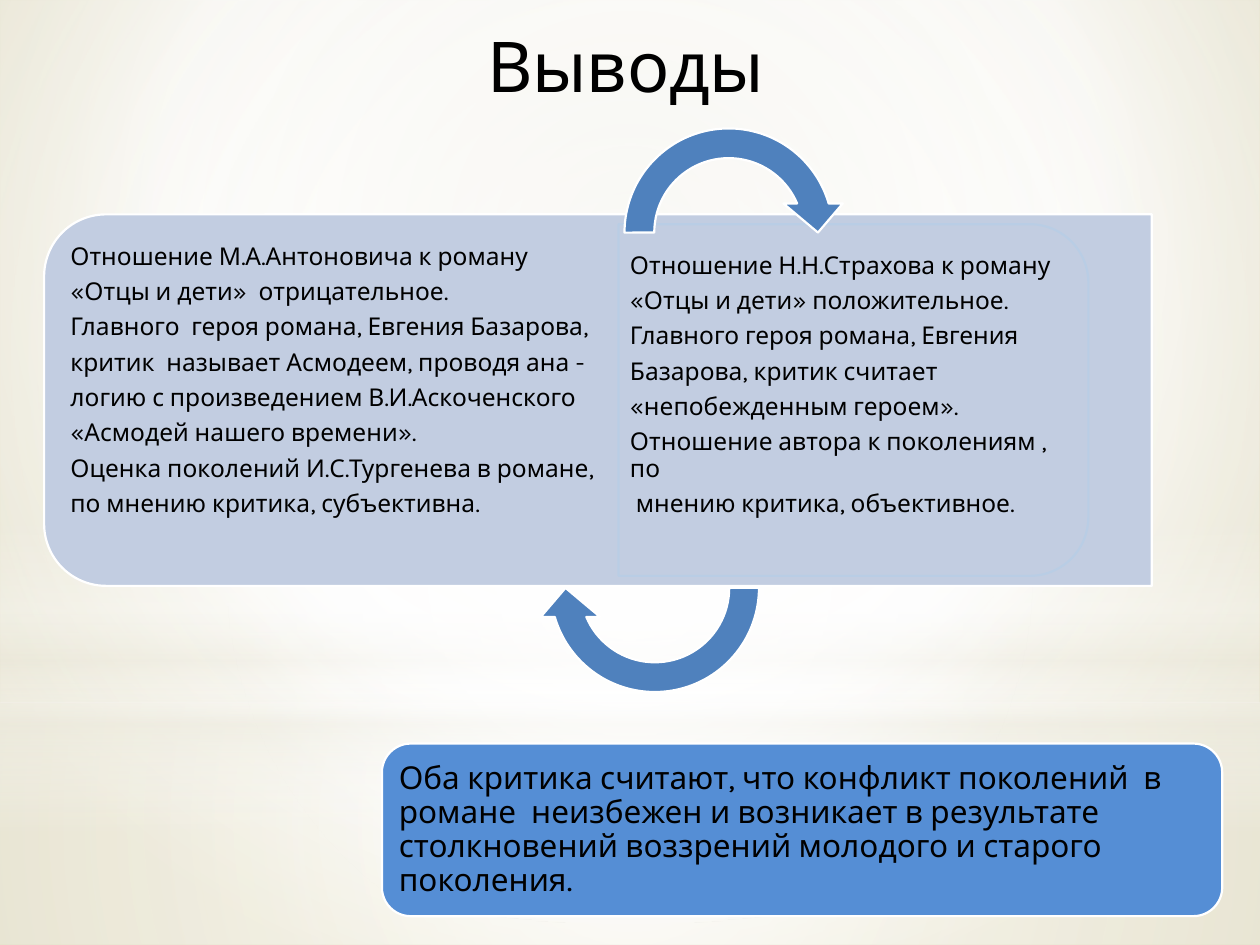
from lxml import etree
from pptx import Presentation
from pptx import util as u
from pptx.dml.color import RGBColor
from pptx.enum import shapes, text
from pptx.oxml.ns import qn

BLACK = RGBColor(0x00, 0x00, 0x00)
WHITE = RGBColor(0xFF, 0xFF, 0xFF)
PANEL = RGBColor(0xC2, 0xCD, 0xE1)
PANEL_EDGE = RGBColor(0xB9, 0xCD, 0xE5)
ARROW = RGBColor(0x4F, 0x81, 0xBD)
SUMMARY = RGBColor(0x55, 0x8E, 0xD5)
SAND = RGBColor(0xEE, 0xEC, 0xE1)
DUNE = RGBColor(0xE7, 0xE4, 0xD4)
STRAW = RGBColor(0xD5, 0xCC, 0x9F)
FONT = "Karla"
SHAPE = shapes.MSO_SHAPE
CENTRE = (50, 50, 50, 50)

ANTONOVICH = [
    "Отношение М.А.Антоновича к роману",
    "«Отцы и дети»  отрицательное.",
    "Главного  героя романа, Евгения Базарова, ",
    "критик  называет Асмодеем, проводя ана -",
    "логию с произведением В.И.Аскоченского ",
    "«Асмодей нашего времени».",
    "Оценка поколений И.С.Тургенева в романе, ",
    "по мнению критика, субъективна.",
]
STRAKHOV = [
    "Отношение Н.Н.Страхова к роману",
    "«Отцы и дети» положительное.",
    "Главного героя романа, Евгения",
    "Базарова, критик считает",
    "«непобежденным героем».",
    "Отношение автора к поколениям , по",
    " мнению критика, объективное.",
]
CONCLUSION = [
    "Оба критика считают, что конфликт поколений  в романе  неизбежен и "
    "возникает в результате столкновений воззрений молодого и старого поколения."
]


def cm(*values):
    return [u.Cm(v) for v in values]


def set_gradient(fill, element, stops, focus=None):
    fill.solid()
    old = element.find(".//" + qn("a:solidFill"))
    grad = etree.Element(qn("a:gradFill"), rotWithShape="1")
    gs_list = etree.SubElement(grad, qn("a:gsLst"))
    for pos, color, opacity in stops:
        gs = etree.SubElement(gs_list, qn("a:gs"), pos=str(pos * 1000))
        clr = etree.SubElement(gs, qn("a:srgbClr"), val=str(color))
        if opacity < 100:
            etree.SubElement(clr, qn("a:alpha"), val=str(opacity * 1000))
    if focus:
        path = etree.SubElement(grad, qn("a:path"))
        path.set("path", "circle")
        sides = {k: str(v * 1000) for k, v in zip("ltrb", focus)}
        etree.SubElement(path, qn("a:fillToRect"), sides)
    else:
        etree.SubElement(grad, qn("a:lin"), ang="5400000", scaled="0")
    old.getparent().replace(old, grad)


def add_block(s, kind, box, fill, line=WHITE, rotation=0):
    x, y, w, h = box
    if rotation in (90, 270):
        x, y, w, h = x + (w - h) / 2, y + (h - w) / 2, h, w
    sp = s.shapes.add_shape(kind, *cm(x, y, w, h))
    sp.rotation = rotation
    sp.shadow.inherit = False
    sp.fill.solid()
    sp.fill.fore_color.rgb = fill
    sp.line.color.rgb = line
    sp.line.width = u.Pt(1.25)
    return sp


def add_text(s, box, lines, size, insets, align=text.PP_ALIGN.LEFT,
             anchor=text.MSO_ANCHOR.TOP):
    tf = s.shapes.add_textbox(*cm(*box)).text_frame
    tf.word_wrap = True
    tf.vertical_anchor = anchor
    tf.margin_left, tf.margin_top, tf.margin_right, tf.margin_bottom = cm(*insets)
    for i, line in enumerate(lines):
        p = tf.paragraphs[0] if i == 0 else tf.add_paragraph()
        p.text = line
        p.alignment = align
        p.line_spacing = 0.9
        p.space_after = u.Pt(size * 0.36)
        p.font.size = u.Pt(size)
        p.font.name = FONT
        p.font.color.rgb = BLACK


def backdrop(s, w, h):
    set_gradient(s.background.fill, s._element,
                 [(0, DUNE, 100), (60, WHITE, 100), (100, STRAW, 100)],
                 (20, 10, 20, 60))
    horizon = 14.17
    layers = [
        (SHAPE.RECTANGLE, horizon, h - horizon,
         [(0, WHITE, 91), (37, WHITE, 76), (100, SAND, 79)], CENTRE),
        (SHAPE.RECTANGLE, 0, horizon,
         [(0, WHITE, 89), (48, WHITE, 62), (100, SAND, 79)], CENTRE),
        (SHAPE.RECTANGLE, 10.46, 6.35,
         [(0, WHITE, 0), (29, WHITE, 30), (45, SAND, 40),
          (55, WHITE, 26), (65, SAND, 60), (100, WHITE, 0)], None),
        (SHAPE.OVAL, 4.45, horizon,
         [(0, WHITE, 100), (56, WHITE, 0)], CENTRE),
    ]
    for kind, top, height, stops, focus in layers:
        sp = s.shapes.add_shape(kind, *cm(0, top, w, height))
        sp.shadow.inherit = False
        sp.line.fill.background()
        set_gradient(sp.fill, sp._element, stops, focus)


def heading(s, box, words):
    sp = s.shapes.title
    s.shapes._spTree.append(sp._element)
    sp.left, sp.top, sp.width, sp.height = cm(*box)
    tf = sp.text_frame
    tf.text = words
    tf.word_wrap = True
    tf.auto_size = text.MSO_AUTO_SIZE.SHAPE_TO_FIT_TEXT
    tf.vertical_anchor = text.MSO_ANCHOR.TOP
    p = tf.paragraphs[0]
    p.alignment = text.PP_ALIGN.CENTER
    p.font.size = u.Pt(40)
    p.font.name = FONT
    p.font.color.rgb = BLACK


def comparison(s, box):
    x, y, w, h = box
    middle = x + 11.58
    add_block(s, SHAPE.ROUND_2_SAME_RECTANGLE, box, PANEL, rotation=270)
    add_text(s, (x + 0.38, y + 0.35, w - 0.38, h - 0.73), ANTONOVICH, 14,
             (0.15, 0.25, 0.23, 0.25), text.PP_ALIGN.JUSTIFY)
    add_block(s, SHAPE.ROUND_2_SAME_RECTANGLE, (middle, y + 0.2, 9.47, h - 0.4),
              PANEL, PANEL_EDGE, 90)
    add_text(s, (middle, y + 0.53, 9.12, 6.4), STRAKHOV, 14,
             (0.23, 0.25, 0.15, 0.25))
    for dx, dy, rotation in [(11.4, -2.03, 0), (9.91, 5.13, 180)]:
        add_block(s, SHAPE.CIRCULAR_ARROW, (x + dx, y + dy, 4.8, 4.8), ARROW,
                  rotation=rotation)


def summary(s, box):
    x, y, w, h = box
    pad = 0.17
    add_block(s, SHAPE.ROUNDED_RECTANGLE, box, SUMMARY)
    add_text(s, (x + pad, y + pad, w - 2 * pad, h - 2 * pad), CONCLUSION, 18,
             [pad] * 4, anchor=text.MSO_ANCHOR.MIDDLE)


def main():
    prs = Presentation()
    prs.slide_width, prs.slide_height = cm(25.4, 19.05)
    s = prs.slides.add_slide(prs.slide_layouts[5])
    backdrop(s, 25.4, 19.05)
    heading(s, (3.51, 0.33, 18.21, 1.96), "Выводы")
    comparison(s, (0.89, 4.32, 22.33, 7.49))
    summary(s, (7.7, 14.99, 16.94, 3.48))
    prs.save("out.pptx")


if __name__ == "__main__":
    main()
